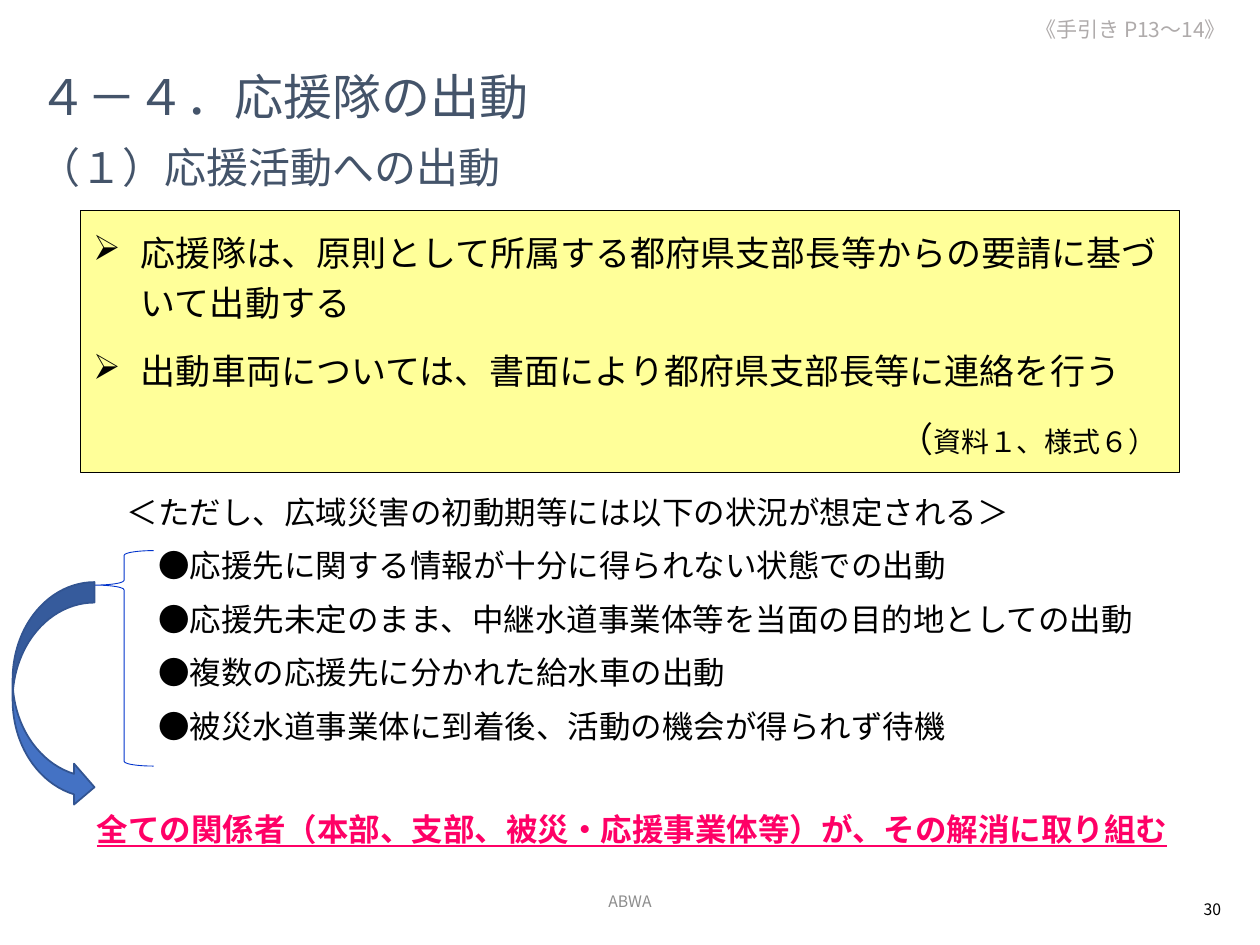
import pptx
import pptx.util
import pptx.dml.color
import pptx.enum.shapes
import pptx.enum.text
import pptx.oxml.ns
from lxml import etree

Inches, Pt = pptx.util.Inches, pptx.util.Pt
SHAPE = pptx.enum.shapes.MSO_SHAPE
ALIGN = pptx.enum.text.PP_ALIGN
ANCHOR = pptx.enum.text.MSO_ANCHOR
FONT = "Noto Sans CJK JP"
BLACK, SLATE = "000000", "44546A"

HEADINGS = [
    ("４－４．応援隊の出動", (0.21, 0.38, 9.58, 0.77), 28, SLATE, ALIGN.LEFT),
    ("（１）応援活動への出動", (0.21, 1.09, 9.58, 0.47), 24, SLATE, ALIGN.LEFT),
]
FOOTERS = [
    ("ABWA", (3.31, 6.95, 3.38, 0.4), 9, "8C8C8C", ALIGN.CENTER),
    ("30", (7.54, 7.02, 2.25, 0.4), 9, BLACK, ALIGN.RIGHT),
]
REFERENCE = ("《手引き P13～14》", (7.54, 0, 2.46, 0.47), 12, "AFABAB", ALIGN.RIGHT)
RULES = [
    "応援隊は、原則として所属する都府県支部長等からの要請に基づいて出動する",
    "出動車両については、書面により都府県支部長等に連絡を行う",
]
SOURCE_NOTE = [("（", 20), ("資料１、様式６）", 16)]
CAVEAT = "＜ただし、広域災害の初動期等には以下の状況が想定される＞"
SITUATIONS = [
    "●応援先に関する情報が十分に得られない状態での出動",
    "●応援先未定のまま、中継水道事業体等を当面の目的地としての出動",
    "●複数の応援先に分かれた給水車の出動",
    "●被災水道事業体に到着後、活動の機会が得られず待機",
]
CONCLUSION = "全ての関係者（本部、支部、被災・応援事業体等）が、その解消に取り組む"


def rgb(color):
    return pptx.dml.color.RGBColor.from_string(color)


def child(parent, tag, **attributes):
    return etree.SubElement(parent, pptx.oxml.ns.qn(tag), **attributes)


def style_run(run, size, color=BLACK):
    run.font.size = Pt(size)
    run.font.name = FONT
    run.font.color.rgb = rgb(color)
    child(run.font._element, "a:ea", typeface=FONT)


def indent(paragraph, left, first=0):
    properties = paragraph._p.get_or_add_pPr()
    properties.set("marL", str(Inches(left)))
    properties.set("indent", str(Inches(first)))
    return properties


def add_text(slide, lines, place, size, color=BLACK, align=ALIGN.LEFT, anchor=ANCHOR.TOP):
    frame = slide.shapes.add_textbox(*map(Inches, place)).text_frame
    frame.word_wrap = True
    frame.vertical_anchor = anchor
    frame.text = "\n".join(lines)
    for paragraph in frame.paragraphs:
        paragraph.alignment = align
        style_run(paragraph.runs[0], size, color)
    return frame


def add_label(slide, text, place, size, color, align):
    return add_text(slide, [text], place, size, color, align, ANCHOR.MIDDLE)


def add_figure(slide, preset, place, fill, line, width):
    figure = slide.shapes.add_shape(preset, *map(Inches, place))
    figure.shadow.inherit = False
    if fill:
        figure.fill.solid()
        figure.fill.fore_color.rgb = rgb(fill)
    else:
        figure.fill.background()
    figure.line.color.rgb = rgb(line)
    figure.line.width = Pt(width)
    return figure


def add_rules(slide):
    panel = add_figure(slide, SHAPE.RECTANGLE, (0.64, 1.67, 8.72, 2.08), "FFFF99", BLACK, 0.75)
    frame = panel.text_frame
    frame.word_wrap = True
    frame.vertical_anchor = ANCHOR.MIDDLE
    frame.text = "\n".join(RULES)
    for rule in frame.paragraphs:
        style_run(rule.runs[0], 20)
        child(indent(rule, 0.38, -0.38), "a:buChar", char="➢")
    note = frame.add_paragraph()
    indent(note, 6.39)
    for text, size in SOURCE_NOTE:
        run = note.add_run()
        run.text = text
        style_run(run, size)
    for paragraph in frame.paragraphs:
        paragraph.alignment = ALIGN.LEFT
        paragraph.line_spacing = 1.2
        paragraph.space_before = Pt(10)


def add_situations(slide):
    frame = add_text(slide, [CAVEAT] + SITUATIONS, (0.91, 3.86, 9.44, 2.22), 18)
    for paragraph in frame.paragraphs:
        paragraph.space_before = Pt(9)
    for situation in frame.paragraphs[1:]:
        indent(situation, 0.25)
    brace = add_figure(slide, SHAPE.LEFT_BRACE, (0.75, 4.37, 0.47, 1.71), None, "0033CC", 0.5)
    brace.adjustments[0] = 0.08
    brace.adjustments[1] = 0.16
    add_figure(slide, SHAPE.CURVED_RIGHT_ARROW, (0.1, 4.62, 0.65, 1.79), "4472C4", "325491", 1)


def add_conclusion(slide):
    conclusion = add_text(slide, [CONCLUSION], (0.67, 6.38, 9.44, 0.4), 18, "FF0066").paragraphs[0]
    conclusion.space_before = Pt(9)
    conclusion.runs[0].font.bold = True
    conclusion.runs[0].font.underline = True


def main():
    deck = pptx.Presentation()
    deck.slide_width, deck.slide_height = Inches(10), Inches(7.5)
    slide = deck.slides.add_slide(deck.slide_layouts[6])
    reference = add_label(slide, *REFERENCE)
    reference.margin_right = Inches(0.27)
    for heading in HEADINGS:
        add_label(slide, *heading)
    add_rules(slide)
    add_situations(slide)
    add_conclusion(slide)
    for footer in FOOTERS:
        add_label(slide, *footer)
    deck.save("out.pptx")


if __name__ == "__main__":
    main()
